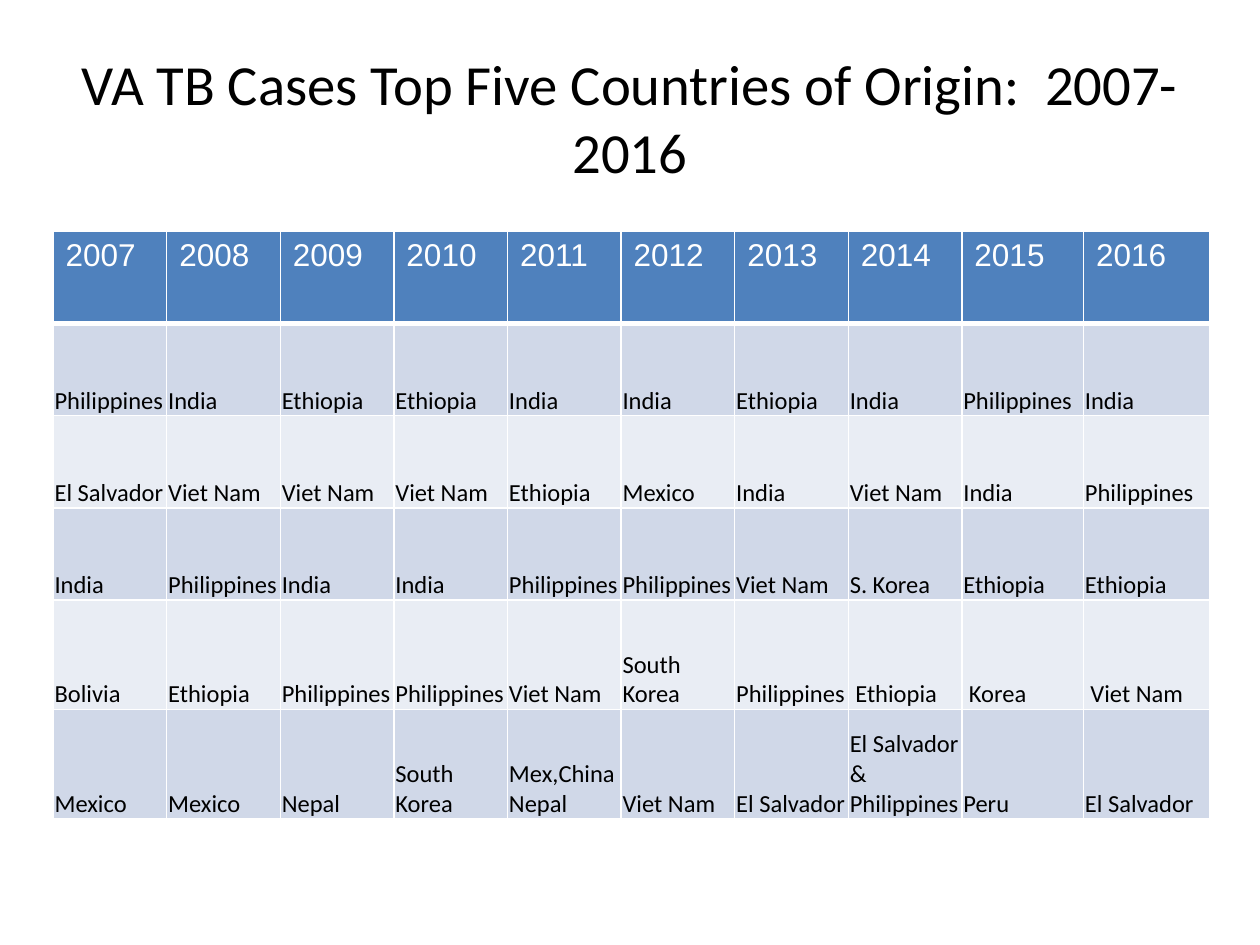
import lxml.etree
import pptx
import pptx.dml.color
import pptx.enum.text
import pptx.oxml.ns
import pptx.util

Cm = pptx.util.Cm
Pt = pptx.util.Pt

YEARS = [str(year) for year in range(2007, 2017)]
COUNTRIES = [
    ["Philippines", "India", "Ethiopia", "Ethiopia", "India",
     "India", "Ethiopia", "India", "Philippines", "India"],
    ["El Salvador", "Viet Nam", "Viet Nam", "Viet Nam", "Ethiopia",
     "Mexico", "India", "Viet Nam", "India", "Philippines"],
    ["India", "Philippines", "India", "India", "Philippines",
     "Philippines", "Viet Nam", "S. Korea", "Ethiopia", "Ethiopia"],
    ["Bolivia", "Ethiopia", "Philippines", "Philippines", "Viet Nam",
     "South Korea", "Philippines", " Ethiopia", " Korea", " Viet Nam"],
    ["Mexico", "Mexico", "Nepal", "South Korea", "Mex,ChinaNepal",
     "Viet Nam", "El Salvador", "El Salvador\n& Philippines", "Peru", "El Salvador"],
]
COLUMN_WIDTHS = [2.29] * 8 + [2.45, 2.54]
ROW_HEIGHTS = [1.86] * 4 + [2.2] * 2
BAND_FILLS = ["D0D8E8", "E9EDF4"]


def color(value):
    return pptx.dml.color.RGBColor.from_string(value)


def format_text(text_frame, font_name, size, font_color, alignment):
    for paragraph in text_frame.paragraphs:
        paragraph.alignment = alignment
        paragraph.font.name = font_name
        paragraph.font.size = Pt(size)
        paragraph.font.bold = False
        paragraph.font.color.rgb = color(font_color)


def set_title(slide, text):
    title = slide.shapes.title
    title.left, title.top, title.width, title.height = Cm(1.27), Cm(0.76), Cm(22.86), Cm(3.18)
    title.text_frame.text = text
    title.text_frame.word_wrap = True
    title.text_frame.auto_size = pptx.enum.text.MSO_AUTO_SIZE.NONE
    title.text_frame.vertical_anchor = pptx.enum.text.MSO_ANCHOR.MIDDLE
    format_text(title.text_frame, "Calibri", 32.4, "000000", pptx.enum.text.PP_ALIGN.CENTER)


def set_borders(cell, bottom_width):
    properties = cell._tc.get_or_add_tcPr()
    qn = pptx.oxml.ns.qn
    for side, width in (("L", 1), ("R", 1), ("T", 1), ("B", bottom_width)):
        line = lxml.etree.SubElement(properties, qn(f"a:ln{side}"), w=str(Pt(width)))
        fill = lxml.etree.SubElement(line, qn("a:solidFill"))
        lxml.etree.SubElement(fill, qn("a:srgbClr"), val="FFFFFF")


def fill_cell(cell, text, fill_color, font_name, size, font_color, bottom_width=1):
    cell.text = text
    format_text(cell.text_frame, font_name, size, font_color, pptx.enum.text.PP_ALIGN.LEFT)
    set_borders(cell, bottom_width)
    cell.fill.solid()
    cell.fill.fore_color.rgb = color(fill_color)


def fill_country_cell(cell, text, fill_color):
    fill_cell(cell, text, fill_color, "Calibri", 14, "000000")
    cell.vertical_anchor = pptx.enum.text.MSO_ANCHOR.BOTTOM
    cell.margin_left = cell.margin_right = cell.margin_top = Cm(0.03)
    cell.margin_bottom = 0


def add_country_table(slide):
    table = slide.shapes.add_table(
        len(ROW_HEIGHTS), len(COLUMN_WIDTHS), Cm(1.07), Cm(4.66),
        Cm(sum(COLUMN_WIDTHS)), Cm(sum(ROW_HEIGHTS))).table
    table.first_row = False
    table.horz_banding = False
    for column, width in zip(table.columns, COLUMN_WIDTHS):
        column.width = Cm(width)
    for row, height in zip(table.rows, ROW_HEIGHTS):
        row.height = Cm(height)
    for column_index, year in enumerate(YEARS):
        fill_cell(table.cell(0, column_index), year, "4F81BD", "Arial", 18, "FFFFFF", 3)
    for row_index, countries in enumerate(COUNTRIES):
        for column_index, country in enumerate(countries):
            fill_country_cell(table.cell(row_index + 1, column_index), country,
                              BAND_FILLS[row_index % 2])


def main():
    presentation = pptx.Presentation()
    presentation.slide_width = Cm(25.4)
    presentation.slide_height = Cm(19.05)
    slide = presentation.slides.add_slide(presentation.slide_layouts.get_by_name("Title Only"))
    set_title(slide, "VA TB Cases Top Five Countries of Origin:  2007-2016")
    add_country_table(slide)
    presentation.save("out.pptx")


if __name__ == "__main__":
    main()
